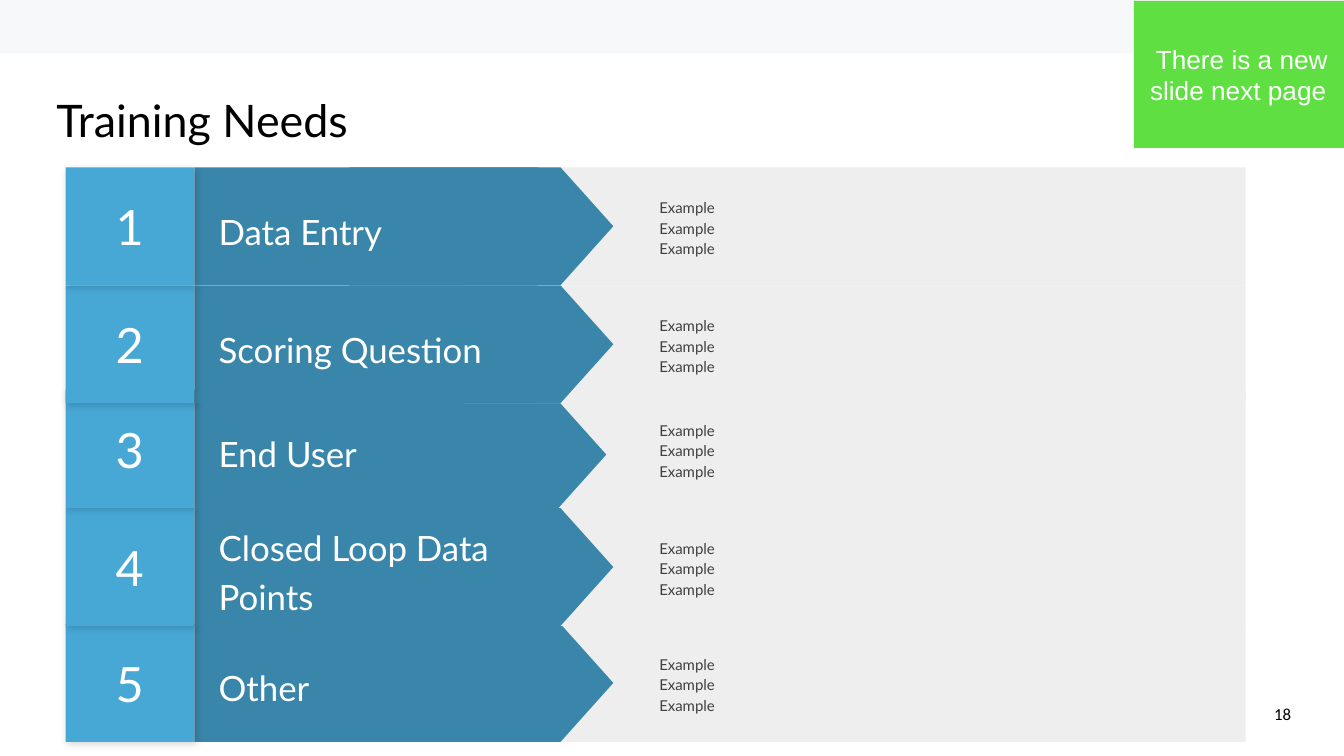
from collections import namedtuple

from lxml.etree import SubElement
from pptx import Presentation
from pptx.dml.color import RGBColor as Rgb
from pptx.enum.shapes import MSO_SHAPE as Kind
from pptx.enum.text import MSO_ANCHOR as Anchor, PP_ALIGN as Align
from pptx.oxml.ns import qn
from pptx.util import Pt

Theme = namedtuple("Theme", "band panel bar badge note white black gray "
                            "face sans plain title digit label body alert page")
LOOK = Theme(band="F7F8F9", panel="EEEEEE", bar="3A86AB", badge="47A8D6",
             note="5FDF41", white="FFFFFF", black="000000", gray="404040",
             face="Lato", sans="Arial", plain="Calibri",
             title=32, digit=34.7, label=24.9, body=10.7, alert=18.7, page=12)
Box = namedtuple("Box", "x y w h")
NEEDS = ["Data Entry", "Scoring Question", "End User",
         "Closed Loop Data Points", "Other"]
TOPS = [119.5, 203.8, 278.6, 362.9, 445.7]
NUDGE = {3: (-5, 4)}


def write(shape, text, size, color, face=LOOK.face, align=Align.LEFT,
          gap=None, pad=9.4, anchor=Anchor.MIDDLE, indent=0):
    """Fill a shape with formatted text."""
    frame = shape.text_frame
    frame.text = text
    frame.word_wrap = True
    frame.vertical_anchor = anchor
    frame.margin_left = frame.margin_right = Pt(pad)
    frame.margin_top = frame.margin_bottom = Pt(pad)
    for para in frame.paragraphs:
        para.alignment = align
        para.line_spacing = gap
        if indent:
            props = para._p.get_or_add_pPr()
            props.set("marL", str(Pt(indent)))
            props.set("indent", "0")
        for run in para.runs:
            run.font.size = Pt(size)
            run.font.name = face
            run.font.color.rgb = Rgb.from_string(color)


def block(shapes, box, color, kind=Kind.RECTANGLE):
    """Add a flat filled shape."""
    shape = shapes.add_shape(kind, *map(Pt, box))
    shape.shadow.inherit = False
    shape.fill.solid()
    shape.fill.fore_color.rgb = Rgb.from_string(color)
    shape.line.fill.background()
    return shape


def shade(shape):
    """Cast a soft shadow down and to the right."""
    effects = shape._element.spPr.find(qn("a:effectLst"))
    outer = SubElement(effects, qn("a:outerShdw"), blurRad=str(Pt(5.6)),
                       dist=str(Pt(2.2)), dir="2700000", algn="tl",
                       rotWithShape="0")
    color = SubElement(outer, qn("a:srgbClr"), val=LOOK.black)
    SubElement(color, qn("a:alpha"), val="17000")


def arrow(shapes, box, color):
    """Add a pointer to the right that fills the box."""
    left = box.x + (box.w - box.h) / 2
    top = box.y + (box.h - box.w) / 2
    shape = block(shapes, Box(left, top, box.h, box.w), color,
                  Kind.FLOWCHART_OFFPAGE_CONNECTOR)
    shape.rotation = 270


def need(slide, box, rank, name):
    """Draw one numbered training need with its examples."""
    shapes = slide.shapes.add_group_shape().shapes
    x, y, w, h = box
    right, down = NUDGE.get(rank, (0, 0))
    block(shapes, Box(x + 284.4, y, w - 284.4, h), LOOK.panel)
    block(shapes, Box(x + 92, y, 245.5, h), LOOK.bar)
    arrow(shapes, Box(x + 202.7 + right, y + down, 188.6, h), LOOK.bar)
    label = shapes.add_textbox(Pt(x + 100), Pt(y + 11.5), Pt(257.8), Pt(64))
    write(label, name, LOOK.label, LOOK.white, gap=1.15)
    badge = block(shapes, Box(x, y, 91.8, h), LOOK.badge)
    shade(badge)
    write(badge, str(rank), LOOK.digit, LOOK.white, align=Align.CENTER)
    items = shapes.add_textbox(Pt(x + 396), Pt(y + 0.7), Pt(395.3), Pt(h - 0.7))
    write(items, "\n".join(["Example"] * 3), LOOK.body, LOOK.gray,
          gap=1.15, indent=18.7)


def needs(slide, box):
    """Stack the needs from the last row up to the first."""
    for rank, name in reversed(list(enumerate(NEEDS, 1))):
        top = box.y + TOPS[rank - 1] - TOPS[0]
        need(slide, Box(box.x, top, box.w, box.h), rank, name)


def head(slide, box):
    """Place the slide title."""
    title = slide.shapes.title
    title.left, title.top, title.width, title.height = map(Pt, box)
    write(title, "Training Needs", LOOK.title, LOOK.black, gap=0.9, pad=0,
          anchor=Anchor.TOP)


def alert(slide, box):
    """Place the green notice in the corner."""
    note = block(slide.shapes, box, LOOK.note)
    write(note, "There is a new slide next page ", LOOK.alert, LOOK.white,
          face=LOOK.sans, align=Align.CENTER, pad=7.2)


def page(slide, box):
    """Place the page number."""
    mark = slide.shapes.add_textbox(*map(Pt, box))
    write(mark, "18", LOOK.page, LOOK.black, face=LOOK.plain, pad=7.9)


def main():
    """Build the deck."""
    deck = Presentation()
    deck.slide_width, deck.slide_height = Pt(960), Pt(540)
    slide = deck.slides.add_slide(deck.slide_layouts[5])
    block(slide.shapes, Box(0, 0, 960, 38.2), LOOK.band)
    head(slide, Box(40.3, 70.6, 876, 60.5))
    needs(slide, Box(46.8, TOPS[0], 843, 84.2))
    page(slide, Box(902.2, 489.6, 57.6, 41))
    alert(slide, Box(810, 0.7, 154, 105))
    deck.save("out.pptx")


if __name__ == "__main__":
    main()
